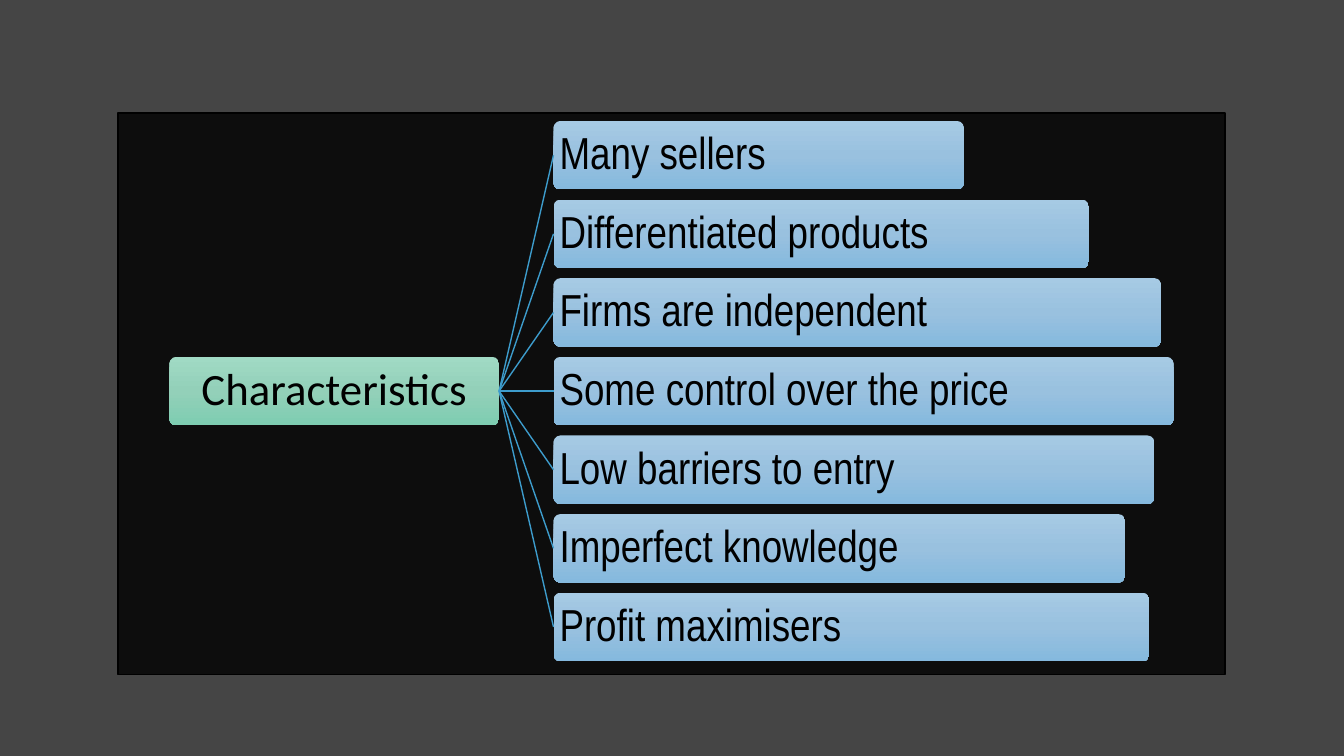
"""Builds a slide that branches a market's characteristics out of one root box."""
from copy import deepcopy
from dataclasses import dataclass

from pptx import Presentation
from pptx.dml.color import RGBColor as Rgb
from pptx.enum.shapes import MSO_CONNECTOR as Connector, MSO_SHAPE as Preset
from pptx.enum.text import MSO_ANCHOR as Anchor, PP_ALIGN as Align
from pptx.oxml.ns import qn
from pptx.oxml.xmlchemy import OxmlElement
from pptx.util import Emu, Pt

EMU_PER_PX = 9144
RIGHT_SIDE, LEFT_SIDE = 3, 1
BOX_HEIGHT, BRANCH_STEP = 68, 78
BRANCH_LEFT, BRANCH_TOP = 549, 120
BRANCHES = [
    ("Many sellers", 407),
    ("Differentiated products", 531),
    ("Firms are independent", 603),
    ("Some control over the price", 615),
    ("Low barriers to entry", 596),
    ("Imperfect knowledge", 567),
    ("Profit maximisers", 591),
]


@dataclass(frozen=True)
class Theme:
    background: str = "454545"
    panel: str = "0D0D0D"
    text: str = "000000"
    connector: str = "3D9CCC"
    root_gradient: tuple = ("A0DAC4", "93D0B9", "7ECDB1")
    branch_gradient: tuple = ("A6CAE4", "99C1DF", "85B9DE")
    root_font: str = "Calibri"
    branch_font: str = "Arial Narrow"
    text_size: int = 32
    line_width: int = 1


THEME = Theme()


def px(length):
    return Emu(length * EMU_PER_PX)


def color(value):
    return Rgb.from_string(value)


def add_preset(slide, preset, left, top, width, height):
    shape = slide.shapes.add_shape(preset, px(left), px(top), px(width), px(height))
    shape.shadow.inherit = False
    return shape


def add_panel(slide, left, top, width, height):
    panel = add_preset(slide, Preset.RECTANGLE, left, top, width, height)
    panel.fill.solid()
    panel.fill.fore_color.rgb = color(THEME.panel)
    panel.line.color.rgb = color(THEME.text)
    panel.line.width = Pt(THEME.line_width)


def fill_gradient(shape, colors):
    shape.fill.gradient()
    shape.fill.gradient_angle = 270
    stop_list = shape.fill._xPr.find(qn("a:gradFill")).find(qn("a:gsLst"))
    while len(stop_list) < len(colors):
        stop_list.append(deepcopy(stop_list[0]))
    for index, (stop, value) in enumerate(zip(shape.fill.gradient_stops, colors)):
        stop.position = index / (len(colors) - 1)
        stop.color.rgb = color(value)


def add_box(slide, text, left, top, width, gradient, font_name, alignment):
    box = add_preset(slide, Preset.ROUNDED_RECTANGLE, left, top, width, BOX_HEIGHT)
    box.adjustments[0] = 0.1
    fill_gradient(box, gradient)
    box.line.fill.background()
    frame = box.text_frame
    frame.text = text
    frame.word_wrap = True
    frame.vertical_anchor = Anchor.MIDDLE
    frame.margin_left = frame.margin_right = px(4)
    frame.margin_top = frame.margin_bottom = px(4)
    paragraph = frame.paragraphs[0]
    paragraph.alignment = alignment
    paragraph.line_spacing = 0.9
    font = paragraph.runs[0].font
    font.name = font_name
    font.size = Pt(THEME.text_size)
    font.color.rgb = color(THEME.text)
    return box


def connect(slide, root, branch):
    connector = slide.shapes.add_connector(Connector.STRAIGHT, 0, 0, 0, 0)
    connector.begin_connect(root, RIGHT_SIDE)
    connector.end_connect(branch, LEFT_SIDE)
    connector.line.color.rgb = color(THEME.connector)
    connector.line.width = Pt(THEME.line_width)
    connector._element.spPr.append(OxmlElement("a:effectLst"))


def main():
    presentation = Presentation()
    presentation.slide_width, presentation.slide_height = px(1333), px(750)
    slide = presentation.slides.add_slide(presentation.slide_layouts[6])
    slide.background.fill.solid()
    slide.background.fill.fore_color.rgb = color(THEME.background)

    add_panel(slide, 117, 112, 1098, 557)
    root_top = BRANCH_TOP + len(BRANCHES) // 2 * BRANCH_STEP
    root = add_box(slide, "Characteristics", 168, root_top, 327,
                   THEME.root_gradient, THEME.root_font, Align.CENTER)
    for index, (text, width) in enumerate(BRANCHES):
        branch = add_box(slide, text, BRANCH_LEFT, BRANCH_TOP + index * BRANCH_STEP, width,
                         THEME.branch_gradient, THEME.branch_font, Align.LEFT)
        connect(slide, root, branch)
    presentation.save("out.pptx")


if __name__ == "__main__":
    main()
